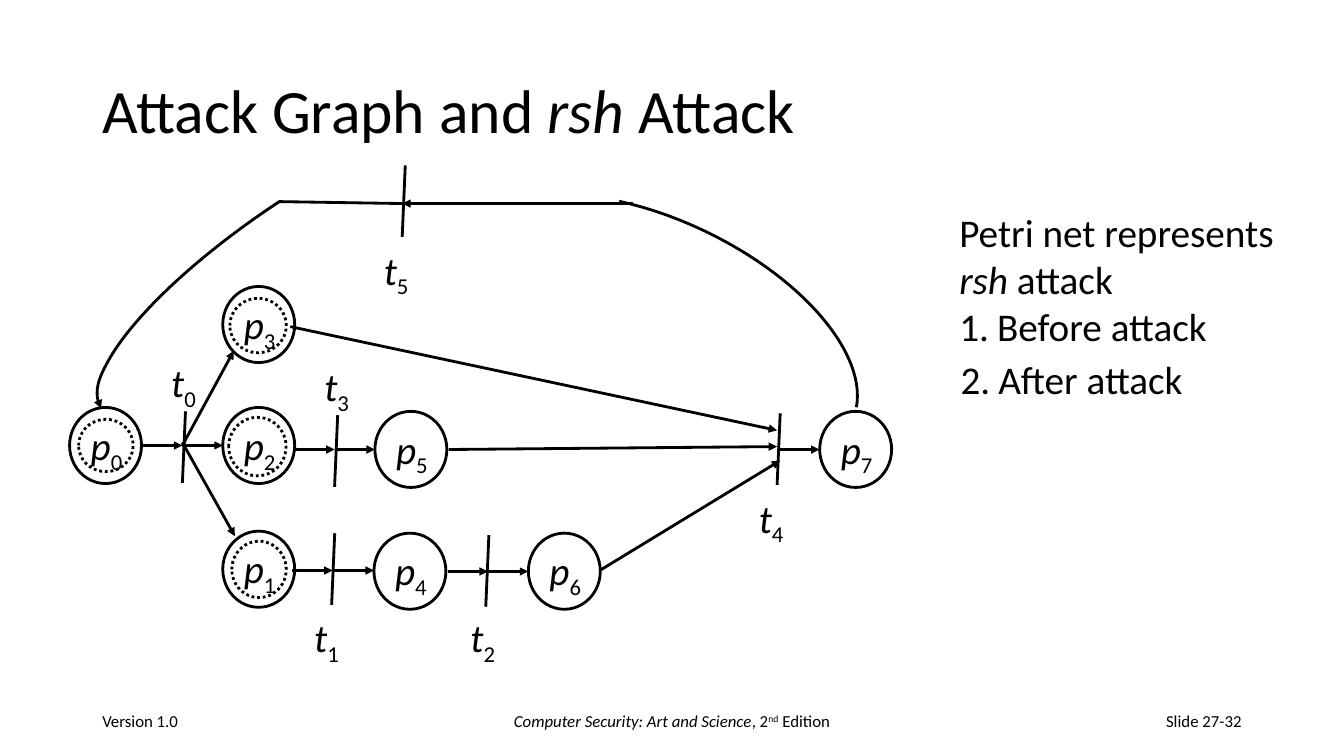
from lxml import etree
from pptx import Presentation
from pptx.dml.color import RGBColor
from pptx.enum.dml import MSO_LINE
from pptx.enum.shapes import MSO_CONNECTOR, MSO_SHAPE
from pptx.enum.text import MSO_ANCHOR, PP_ALIGN
from pptx.oxml.ns import qn
from pptx.util import Pt

STRAIGHT = MSO_CONNECTOR.STRAIGHT
OVAL, ARC = MSO_SHAPE.OVAL, MSO_SHAPE.ARC
DOTTED = MSO_LINE.ROUND_DOT
TOP, MIDDLE = MSO_ANCHOR.TOP, MSO_ANCHOR.MIDDLE
LEFT, CENTER, RIGHT = PP_ALIGN.LEFT, PP_ALIGN.CENTER, PP_ALIGN.RIGHT
BLACK = "000000"


def add_text(box, paragraphs, size, align=LEFT, anchor=TOP, wrap=True):
    tf = slide.shapes.add_textbox(*map(Pt, box)).text_frame
    tf.word_wrap = wrap
    tf.vertical_anchor = anchor
    for i, (number, runs) in enumerate(paragraphs):
        p = tf.paragraphs[0] if i == 0 else tf.add_paragraph()
        p.alignment = align
        if number:
            pPr = p._p.get_or_add_pPr()
            pPr.set("marL", str(Pt(27)))
            pPr.set("indent", str(-Pt(27)))
            etree.SubElement(pPr, qn("a:buAutoNum"), type="arabicPeriod", startAt=str(number))
        for words, italic, baseline in runs:
            r = p.add_run()
            r.text = words
            r.font.name = "Calibri"
            r.font.size = Pt(size)
            r.font.italic = italic
            r.font.color.rgb = RGBColor.from_string(BLACK)
            if baseline:
                r._r.get_or_add_rPr().set("baseline", str(baseline * 1000))
    return tf


def stroke(s, arrow=None):
    s.line.color.rgb = RGBColor.from_string(BLACK)
    s.line.width = Pt(2)
    if arrow:
        etree.SubElement(s.line._ln, qn(arrow), type="triangle")
    etree.SubElement(s._element.spPr, qn("a:effectLst"))


prs = Presentation()
prs.slide_width, prs.slide_height = Pt(960), Pt(540)
slide = prs.slides.add_slide(prs.slide_layouts[6])

title = [("Attack Graph and ", False, 0), ("rsh", True, 0), (" Attack", False, 0)]
tf = add_text((66, 28.8, 828, 104.4), [(0, title)], 44, anchor=MIDDLE)
tf.paragraphs[0].line_spacing = 0.9

book = [("Computer Security: Art and Science", True, 0), (", 2", False, 0),
        ("nd", False, 30), (" Edition", False, 0)]
for left, width, align, runs in [
    (66, 216, LEFT, [("Version 1.0", False, 0)]),
    (318, 324, CENTER, book),
    (678, 216, RIGHT, [("Slide 27-32", False, 0)]),
]:
    add_text((left, 500.5, width, 28.8), [(0, runs)], 12, align, MIDDLE)

places = [(49.7, 291), (159.1, 379.4), (159.1, 291), (159.1, 204.6),
          (267.1, 380.8), (267.8, 293.8), (377.4, 380.8), (585.5, 293.8)]
tokens = [(56.2, 299.5, 38.9, 37.4), (165.6, 386.6, 38.9, 40.3),
          (163.4, 298.1, 41, 41.8), (164.2, 213.1, 40.3, 38.9)]
transitions = [((130.3, 293.8), (115.2, 252.7)), ((236.9, 380.9), (217.4, 434.9)),
               ((347, 382.3), (329, 434.9)), ((239, 296.6), (224.6, 255.6)),
               ((555.1, 295.2), (535, 349.2)), ((287.3, 118.1), (267.1, 172.1))]
arrows = [
    (100.8, 318.2, 130.3, 318.2), (130.3, 318.2, 159.1, 318.2),
    (130.3, 318.2, 167, 250.6), (130.3, 316.1, 167.8, 383),
    (210.2, 321.1, 239, 321.1), (239, 321.1, 267.8, 321.1),
    (208.8, 407.5, 237.6, 407.5), (237.6, 407.5, 267.1, 407.5),
    (319.7, 408.2, 348.5, 408.2), (348.5, 408.2, 377.3, 408.2),
    (556.6, 321.1, 585.4, 321.1), (428.4, 407.5, 557.3, 329),
    (320.4, 321.1, 555.1, 319), (207.4, 233.3, 555.1, 307.4),
    (452.2, 145.4, 287.3, 145.4),
]
bars = [(x + 2.2, y, x, y + 51.1) for (x, y), label in transitions]
plain_lines = bars + [(287.3, 145.4, 199.4, 144)]

for ends, arrow in [(e, "a:tailEnd") for e in arrows] + [(e, None) for e in plain_lines]:
    stroke(slide.shapes.add_connector(STRAIGHT, *map(Pt, ends)), arrow)

ovals = [((x, y, 51.4, 54.4), False) for x, y in places] + [(box, True) for box in tokens]
for box, is_token in ovals:
    s = slide.shapes.add_shape(OVAL, *map(Pt, box))
    s.fill.background()
    stroke(s)
    if is_token:
        s.line.dash_style = DOTTED

for box, rotation, angles, arrow in [
    ((317.5, 157.7, 306, 154.1), 25.6, (136.3, 213.66), None),
    ((175.7, 0.7, 107.3, 375.8), 236.7, (162, 0), "a:headEnd"),
]:
    s = slide.shapes.add_shape(ARC, *map(Pt, box))
    s.rotation = rotation
    s.adjustments[0], s.adjustments[1] = angles
    s.fill.background()
    stroke(s, arrow)

labels = [("p", i, x + 8, y + 6.2, 38.9) for i, (x, y) in enumerate(places)]
labels += [("t", i, x, y, 33.8) for i, (bar, (x, y)) in enumerate(transitions)]
for letter, index, x, y, width in labels:
    runs = [(letter, True, 0), (str(index), False, -25)]
    add_text((x, y, width, 41), [(0, runs)], 28, wrap=False)

petri = [("Petri net represents ", False, 0), ("rsh", True, 0), (" attack", False, 0)]
add_text((678.2, 145.4, 239.8, 108.7),
         [(0, petri), (1, [("Before attack", False, 0)])], 28)
add_text((679, 250.6, 176.4, 41), [(2, [("After attack", False, 0)])], 28, wrap=False)

prs.save("out.pptx")
